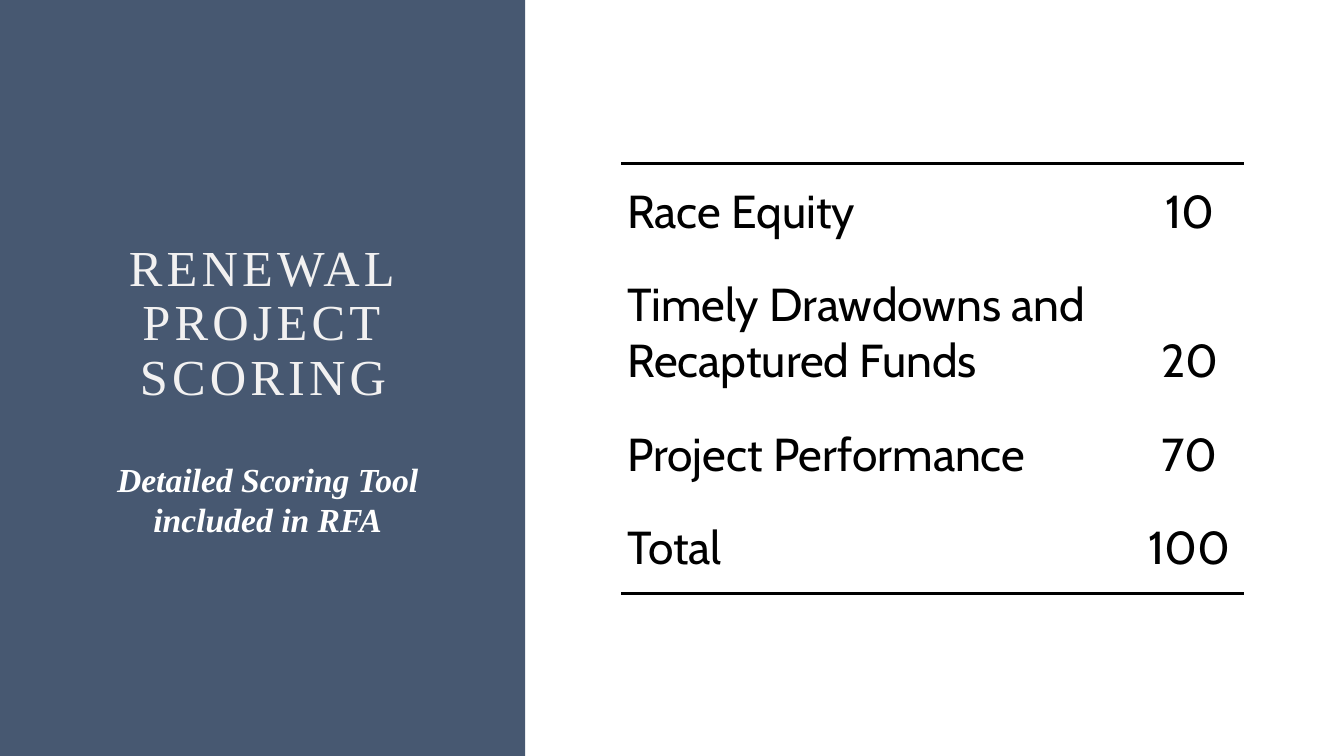
from dataclasses import dataclass

from lxml.etree import SubElement
from pptx import Presentation
from pptx.dml.color import RGBColor
from pptx.enum.shapes import MSO_SHAPE as Preset
from pptx.enum.text import MSO_ANCHOR as Anchor, PP_ALIGN as Align
from pptx.oxml.ns import qn
from pptx.util import Inches, Pt

SERIF = "Times New Roman"
SANS = "Cabin"
NAVY = "475871"
WHITE = "FFFFFF"
OFF_WHITE = "F2F1F1"
BLACK = "000000"


@dataclass(frozen=True)
class TextStyle:
    font: str
    size: float
    color: str
    emphasis: bool = False
    tracking: float = 0


@dataclass(frozen=True)
class Criterion:
    name: str
    points: int
    height: float = 0.93


@dataclass(frozen=True)
class Caption:
    text: str
    box: tuple[float, float, float, float]
    style: TextStyle
    anchor: Anchor
    line_spacing: float = 1.0
    space_before: float = 0


CAPTIONS = [
    Caption("RENEWAL PROJECT SCORING", (0.94, 0.75, 3.34, 3.33),
            TextStyle(SERIF, 36, OFF_WHITE, tracking=3), Anchor.BOTTOM, line_spacing=0.9),
    Caption("Detailed Scoring Tool included in RFA", (1.02, 4.5, 3.27, 2.25),
            TextStyle(SERIF, 24, WHITE, emphasis=True), Anchor.TOP, space_before=10),
]
CRITERIA = [
    Criterion("Race Equity", 10),
    Criterion("Timely Drawdowns and Recaptured Funds", 20, height=1.48),
    Criterion("Project Performance", 70),
    Criterion("Total", 100),
]
COLUMN_WIDTHS = (5.1, 1.08)
CELL_STYLE = TextStyle(SANS, 33, BLACK)


def rgb(color: str) -> RGBColor:
    return RGBColor.from_string(color)


def add_span(para, text: str, style: TextStyle) -> None:
    span = para.add_run()
    span.text = text
    span.font.name = style.font
    span.font.size = Pt(style.size)
    span.font.bold = span.font.italic = style.emphasis
    span.font.color.rgb = rgb(style.color)
    if style.tracking:
        span.font._element.set("spc", str(int(style.tracking * 100)))


def add_panel(page) -> None:
    panel = page.shapes.add_shape(Preset.RECTANGLE, 0, 0, Inches(5.21), Inches(7.5))
    panel.shadow.inherit = False
    panel.fill.solid()
    panel.fill.fore_color.rgb = rgb(NAVY)
    panel.line.fill.background()


def add_caption(page, caption: Caption) -> None:
    box = page.shapes.add_textbox(*(Inches(length) for length in caption.box))
    frame = box.text_frame
    frame.word_wrap = True
    frame.vertical_anchor = caption.anchor
    para = frame.paragraphs[0]
    para.alignment = Align.CENTER
    para.line_spacing = caption.line_spacing
    para.space_before = Pt(caption.space_before)
    add_span(para, caption.text, caption.style)


def set_borders(cell, ruled_sides: str) -> None:
    """Rule the given sides (letters of L, R, T, B) and clear the others."""
    properties = cell._tc.get_or_add_tcPr()
    for side in "LRTB":
        line = SubElement(properties, qn(f"a:ln{side}"))
        if side in ruled_sides:
            line.set("w", str(Pt(2)))
            fill = SubElement(line, qn("a:solidFill"))
            SubElement(fill, qn("a:srgbClr")).set("val", BLACK)
        else:
            SubElement(line, qn("a:noFill"))


def fill_cell(cell, text: str, align: Align, ruled_sides: str) -> None:
    set_borders(cell, ruled_sides)
    cell.fill.solid()
    cell.fill.fore_color.rgb = rgb(WHITE)
    cell.vertical_anchor = Anchor.BOTTOM
    cell.margin_left = cell.margin_right = Inches(0.06)
    cell.margin_top = cell.margin_bottom = Inches(0.17)
    para = cell.text_frame.paragraphs[0]
    para.alignment = align
    add_span(para, text, CELL_STYLE)


def add_score_table(page, criteria: list[Criterion]) -> None:
    width = sum(COLUMN_WIDTHS)
    height = sum(criterion.height for criterion in criteria)
    table = page.shapes.add_table(len(criteria), len(COLUMN_WIDTHS), Inches(6.16), Inches(1.62),
                                  Inches(width), Inches(height)).table
    table.first_row = table.horz_banding = False
    for column, column_width in zip(table.columns, COLUMN_WIDTHS):
        column.width = Inches(column_width)
    for index, criterion in enumerate(criteria):
        table.rows[index].height = Inches(criterion.height)
        ruled_sides = {0: "T", len(criteria) - 1: "B"}.get(index, "")
        fill_cell(table.cell(index, 0), criterion.name, Align.LEFT, ruled_sides)
        fill_cell(table.cell(index, 1), str(criterion.points), Align.CENTER, ruled_sides)


def main() -> None:
    deck = Presentation()
    deck.slide_width, deck.slide_height = Inches(13.33), Inches(7.5)
    page = deck.slides.add_slide(deck.slide_layouts[6])

    # Left panel with title and note
    add_panel(page)
    for caption in CAPTIONS:
        add_caption(page, caption)

    # Scoring criteria
    add_score_table(page, CRITERIA)
    deck.save("out.pptx")


if __name__ == "__main__":
    main()
